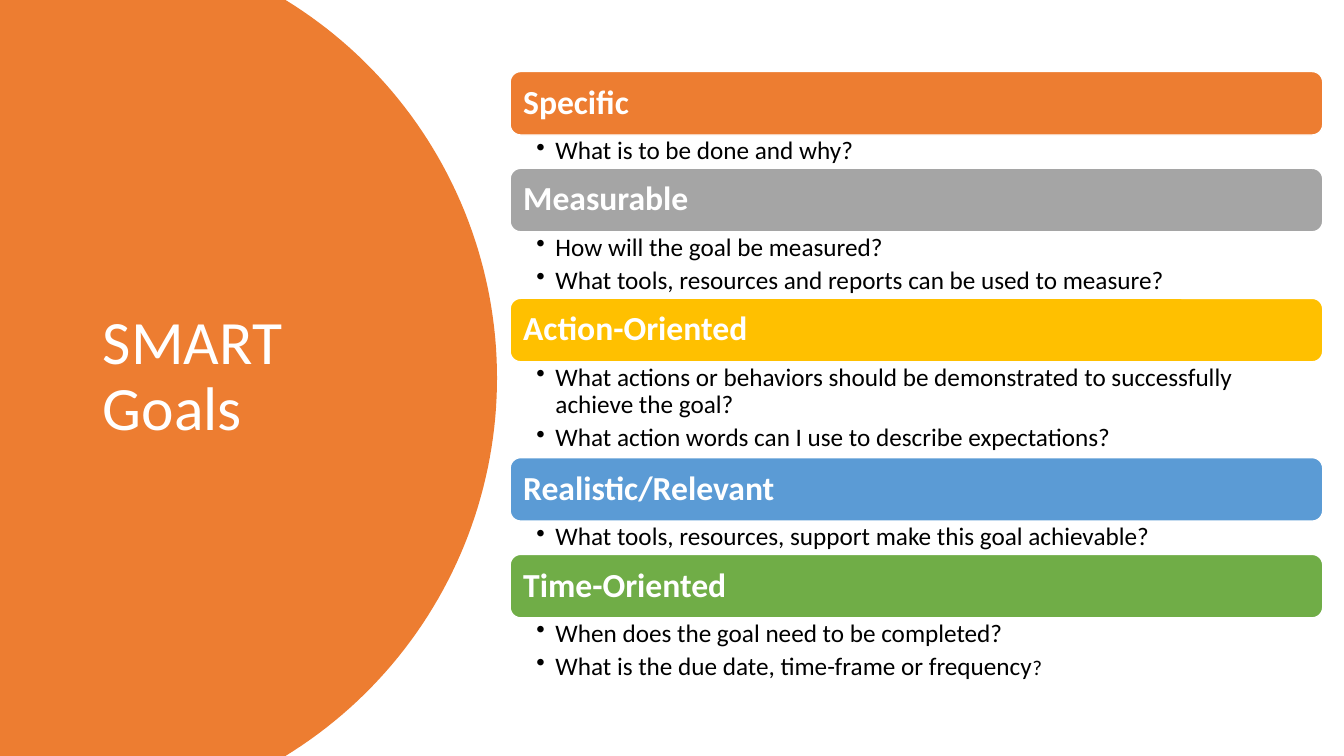
"""Build the SMART Goals slide."""
import math

from lxml import etree
from pptx import Presentation
from pptx.dml.color import RGBColor
from pptx.enum import shapes, text
from pptx.oxml.ns import qn
from pptx.util import Inches, Pt

ORANGE = RGBColor(0xED, 0x7D, 0x31)
GRAY = RGBColor(0xA5, 0xA5, 0xA5)
GOLD = RGBColor(0xFF, 0xC0, 0x00)
BLUE = RGBColor(0x5B, 0x9B, 0xD5)
GREEN = RGBColor(0x70, 0xAD, 0x47)
WHITE = RGBColor(0xFF, 0xFF, 0xFF)
BLACK = RGBColor(0, 0, 0)

TITLE = "SMART Goals"
GOALS = [
    ("Specific", ORANGE, 0.33, ["What is to be done and why?"]),
    ("Measurable", GRAY, 0.66, [
        "How will the goal be measured?",
        "What tools, resources and reports can be used to measure?"]),
    ("Action-Oriented", GOLD, 0.95, [
        "What actions or behaviors should be demonstrated to successfully achieve the goal?",
        "What action words can I use to describe expectations?"]),
    ("Realistic/Relevant", BLUE, 0.33, [
        "What tools, resources, support make this goal achievable?"]),
    ("Time-Oriented", GREEN, 0.66, [
        "When does the goal need to be completed?",
        "What is the due date, time-frame or frequency"]),
]
LAST_MARK = "?"

WIDTH, HEIGHT = 13.33, 7.5
LIST_LEFT, LIST_TOP, LIST_WIDTH, BAR_HEIGHT = 5.06, 0.71, 8.06, 0.63
ARC_CENTER, ARC_RADIUS, ARC_STEPS = 0.53, 4.4, 90


def write(tf, lines, size, color, bold=False, bullet=False, after=0,
          insets=(0.1, 0.05, 0.1, 0.05), anchor=text.MSO_ANCHOR.MIDDLE):
    """Fill a text frame with one paragraph per line."""
    tf.word_wrap = True
    tf.auto_size = text.MSO_AUTO_SIZE.NONE
    tf.vertical_anchor = anchor
    tf.margin_left, tf.margin_top, tf.margin_right, tf.margin_bottom = map(Inches, insets)
    for i, line in enumerate(lines):
        p = tf.paragraphs[0] if i == 0 else tf.add_paragraph()
        p.alignment = text.PP_ALIGN.LEFT
        p.line_spacing = 0.9
        p.space_after = Pt(after)
        if bullet:
            pPr = p._p.get_or_add_pPr()
            pPr.set("marL", str(Inches(0.19)))
            pPr.set("indent", str(-Inches(0.19)))
            etree.SubElement(pPr, qn("a:buChar")).set("char", "•")
        r = p.add_run()
        r.text = line
        style(r, size, color, bold)


def style(r, size, color, bold=False):
    """Set the font of a run."""
    r.font.name = "Calibri"
    r.font.size = Pt(size)
    r.font.bold = bold
    r.font.color.rgb = color


def paint(sp, color):
    """Give a shape a plain fill without shadow."""
    sp.shadow.inherit = False
    sp.fill.solid()
    sp.fill.fore_color.rgb = color


def add_panel(s):
    """Draw the round-edged panel behind the title."""
    half = math.asin(HEIGHT / 2 / ARC_RADIUS)
    angles = [half * (2 * i / ARC_STEPS - 1) for i in range(ARC_STEPS + 1)]
    arc = [(Inches(ARC_CENTER + ARC_RADIUS * math.cos(a)),
            Inches(HEIGHT / 2 + ARC_RADIUS * math.sin(a))) for a in angles]
    builder = s.shapes.build_freeform(0, 0)
    builder.add_line_segments(arc + [(0, Inches(HEIGHT))], close=True)
    panel = builder.convert_to_shape()
    paint(panel, ORANGE)
    panel.line.fill.background()
    s.shapes.element.insert(2, panel.element)


def add_goal(s, top, name, color, list_height, questions):
    """Add a heading bar with its questions and return the list frame."""
    bar = s.shapes.add_shape(shapes.MSO_SHAPE.ROUNDED_RECTANGLE, Inches(LIST_LEFT),
                             Inches(top), Inches(LIST_WIDTH), Inches(BAR_HEIGHT))
    paint(bar, color)
    bar.line.color.rgb = WHITE
    bar.line.width = Pt(1)
    write(bar.text_frame, [name], 24, WHITE, bold=True, insets=(0.1, 0.1, 0.1, 0.1))
    box = s.shapes.add_textbox(Inches(LIST_LEFT), Inches(top + BAR_HEIGHT),
                               Inches(LIST_WIDTH), Inches(list_height))
    write(box.text_frame, questions, 18, BLACK, bullet=True, after=4,
          insets=(0.26, 0.03, 0.14, 0.03), anchor=text.MSO_ANCHOR.TOP)
    return box.text_frame


def main():
    """Lay out the slide and save it."""
    prs = Presentation()
    prs.slide_width, prs.slide_height = Inches(WIDTH), Inches(HEIGHT)
    s = prs.slides.add_slide(prs.slide_layouts[5])
    add_panel(s)
    title = s.shapes.title
    title.left, title.top = Inches(0.92), Inches(0.7)
    title.width, title.height = Inches(3.23), Inches(6.09)
    write(title.text_frame, [TITLE], 44, WHITE)
    top = LIST_TOP
    for name, color, list_height, questions in GOALS:
        tf = add_goal(s, top, name, color, list_height, questions)
        top += BAR_HEIGHT + list_height
    r = tf.paragraphs[-1].add_run()
    r.text = LAST_MARK
    style(r, 15, BLACK)
    prs.save("out.pptx")


if __name__ == "__main__":
    main()
